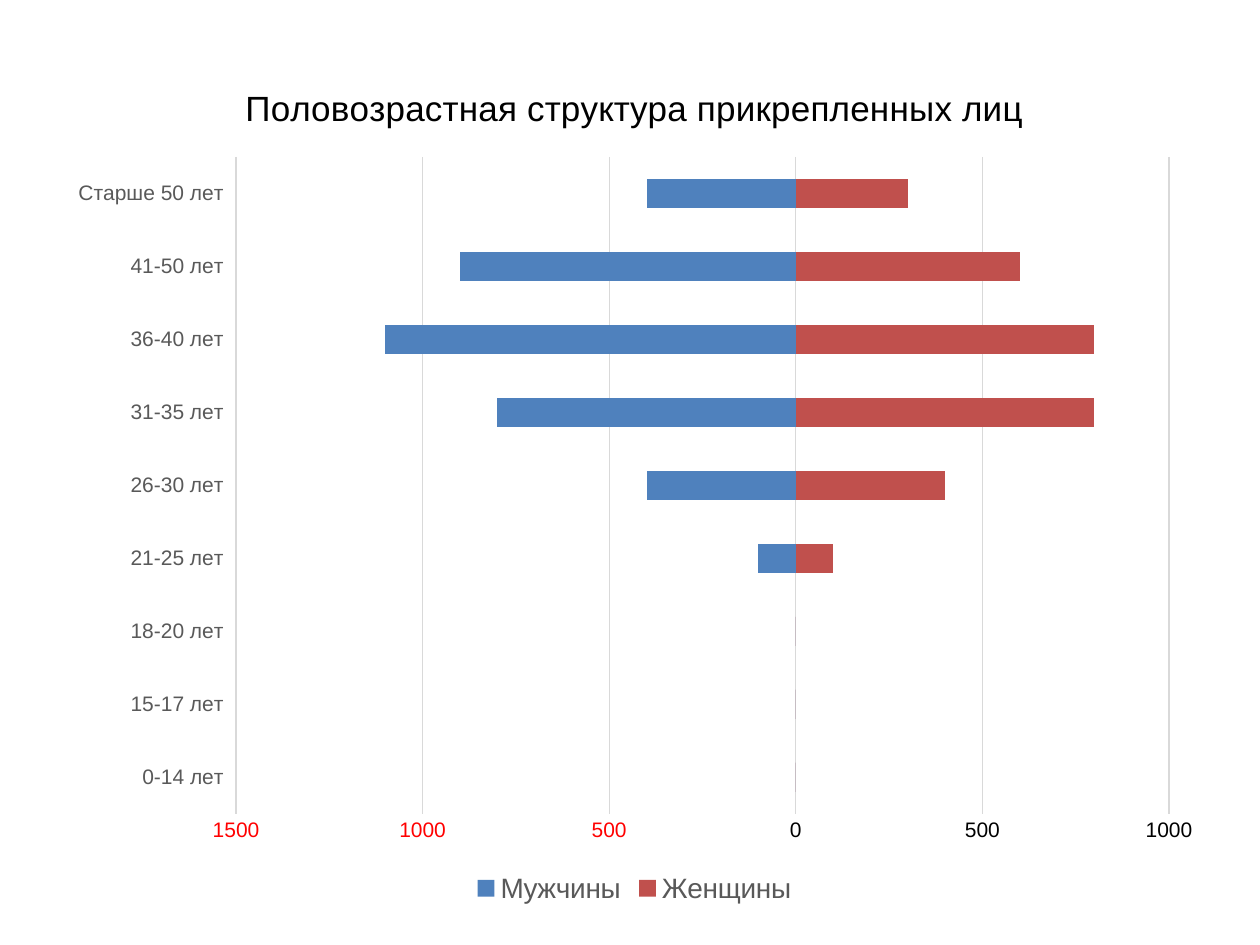
import pptx
import pptx.chart.data
import pptx.dml.color
import pptx.enum.chart
import pptx.oxml
import pptx.oxml.ns
import pptx.util

PX = 9144000 // 1260
GREY = "595959"
BLACK = "000000"
RULE = "D9D9D9"
AGES = ["0-14 лет", "15-17 лет", "18-20 лет", "21-25 лет", "26-30 лет",
        "31-35 лет", "36-40 лет", "41-50 лет", "Старше 50 лет"]
SERIES = [
    ("Мужчины", "4F81BD", [0, 0, 0, -100, -400, -800, -1100, -900, -400]),
    ("Женщины", "C0504D", [0, 0, 0, 100, 400, 800, 800, 600, 300]),
]


def px(n):
    return pptx.util.Emu(n * PX)


def rgb(value):
    return pptx.dml.color.RGBColor.from_string(value)


def set_attrs(obj, formats):
    for name, value in formats.items():
        setattr(obj, name, value)


def set_font(font, size, color):
    set_attrs(font, {"name": "Arial", "size": pptx.util.Pt(size), "bold": False})
    font.color.rgb = rgb(color)


def set_rule(line):
    line.color.rgb = rgb(RULE)
    line.width = pptx.util.Pt(0.75)


def place_plot(chart, box, plot_box):
    left, top, width, height = box
    x, y, w, h = plot_box
    fractions = {"x": x / width, "y": y / height, "w": w / width, "h": h / height}
    modes = '<c:layoutTarget val="inner"/><c:xMode val="edge"/><c:yMode val="edge"/>'
    values = "".join(f'<c:{k} val="{v:.4f}"/>' for k, v in fractions.items())
    layout = pptx.oxml.parse_xml(
        f'<c:layout {pptx.oxml.ns.nsdecls("c")}><c:manualLayout>'
        f'{modes}{values}</c:manualLayout></c:layout>')
    area = chart._chartSpace.chart.plotArea
    for old in area.findall(pptx.oxml.ns.qn("c:layout")):
        area.remove(old)
    area.insert(0, layout)


def add_pyramid(s, box, plot_box):
    data = pptx.chart.data.CategoryChartData(number_format="0;[Red]0")
    data.categories = AGES
    for name, color, values in SERIES:
        data.add_series(name, values)
    kind = pptx.enum.chart.XL_CHART_TYPE.BAR_STACKED
    chart = s.shapes.add_chart(kind, *map(px, box), data).chart

    chart.has_title = True
    tf = chart.chart_title.text_frame
    tf.text = "Половозрастная структура прикрепленных лиц"
    set_font(tf.paragraphs[0].runs[0].font, 20, BLACK)
    chart.chart_title.include_in_layout = False

    plot = chart.plots[0]
    set_attrs(plot, {"gap_width": 150, "overlap": 100, "vary_by_categories": False})
    for series, (name, color, values) in zip(plot.series, SERIES):
        series.invert_if_negative = False
        series.format.fill.solid()
        series.format.fill.fore_color.rgb = rgb(color)

    none = pptx.enum.chart.XL_TICK_MARK.NONE
    for axis, color in ((chart.category_axis, GREY), (chart.value_axis, BLACK)):
        set_attrs(axis, {"major_tick_mark": none, "minor_tick_mark": none})
        set_font(axis.tick_labels.font, 12, color)
    low = pptx.enum.chart.XL_TICK_LABEL_POSITION.LOW
    set_attrs(chart.category_axis, {"tick_label_position": low, "has_major_gridlines": False})
    set_rule(chart.category_axis.format.line)

    axis = chart.value_axis
    set_attrs(axis, {"minimum_scale": -1500, "maximum_scale": 1000, "major_unit": 500,
                     "has_major_gridlines": True})
    set_attrs(axis.tick_labels, {"number_format": "0;[Red]0", "number_format_is_linked": False})
    set_rule(axis.major_gridlines.format.line)
    axis.format.line.fill.background()

    chart.has_legend = True
    bottom = pptx.enum.chart.XL_LEGEND_POSITION.BOTTOM
    set_attrs(chart.legend, {"position": bottom, "include_in_layout": False})
    set_font(chart.legend.font, 16, GREY)
    place_plot(chart, box, plot_box)


def main():
    prs = pptx.Presentation()
    set_attrs(prs, {"slide_width": px(1260), "slide_height": px(945)})
    s = prs.slides.add_slide(prs.slide_layouts[6])
    add_pyramid(s, (54, 56, 1161, 853), (182, 101, 933, 657))
    prs.save("out.pptx")


if __name__ == "__main__":
    main()
